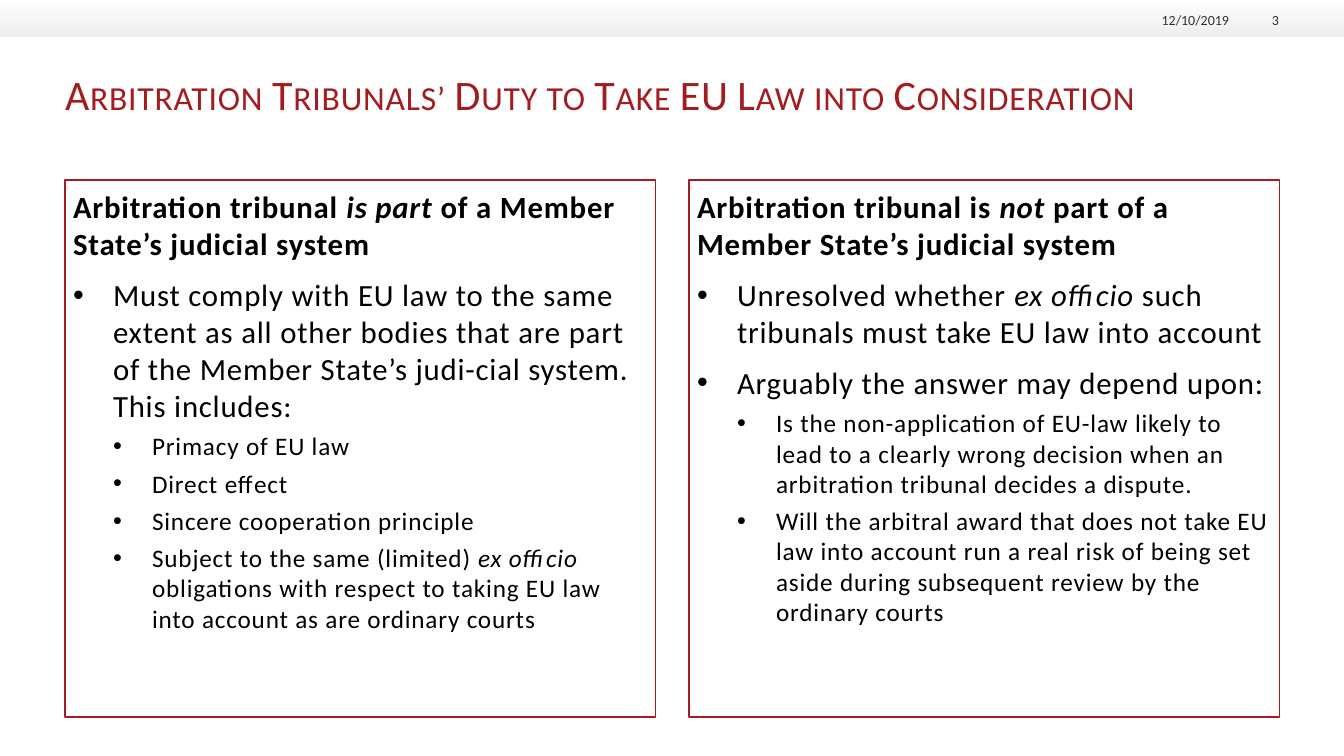
from lxml import etree
from pptx import Presentation
from pptx.dml.color import RGBColor
from pptx.enum.shapes import MSO_SHAPE
from pptx.enum.text import MSO_ANCHOR, MSO_AUTO_SIZE, PP_ALIGN
from pptx.oxml.ns import qn
from pptx.util import Pt

RECTANGLE = MSO_SHAPE.RECTANGLE
TOP, BOTTOM = MSO_ANCHOR.TOP, MSO_ANCHOR.BOTTOM
LEFT, RIGHT = PP_ALIGN.LEFT, PP_ALIGN.RIGHT
NO_FIT = MSO_AUTO_SIZE.NONE

PX = 914400 / 100.8
TWO_CONTENT = 3

THEME = {
    "font": "Calibri",
    "accent": RGBColor(0xA3, 0x1D, 0x20),
    "text": RGBColor(0, 0, 0),
    "muted": RGBColor(0x33, 0x33, 0x33),
    "bar": (RGBColor(0xFF, 0xFF, 0xFF), RGBColor(0xEE, 0xEF, 0xEE)),
    "title_size": Pt(30),
    "level_sizes": (Pt(22), Pt(18)),
    "meta_size": Pt(10),
    "spacing": "60",
}

HEADING, POINT, SUBPOINT = "heading", "point", "subpoint"
STYLES = {
    HEADING: {"level": 0, "margin": 0, "hang": 0, "before": Pt(0)},
    POINT: {"level": 0, "margin": 40, "hang": 40, "before": Pt(10)},
    SUBPOINT: {"level": 1, "margin": 79, "hang": 39, "before": Pt(5)},
}

COLUMNS = [
    [
        (HEADING, ["Arbitration tribunal ", "is part ", "of a Member State’s judicial system"]),
        (POINT, ["Must comply with EU law to the same extent as all other bodies that are "
                 "part of the Member State’s judi-cial system. This includes:"]),
        (SUBPOINT, ["Primacy of EU law"]),
        (SUBPOINT, ["Direct effect"]),
        (SUBPOINT, ["Sincere cooperation principle"]),
        (SUBPOINT, ["Subject to the same (limited) ", "ex officio",
                    " obligations with respect to taking EU law into account as are ordinary courts"]),
    ],
    [
        (HEADING, ["Arbitration tribunal is ", "not", " part of a Member State’s judicial system"]),
        (POINT, ["Unresolved whether ", "ex officio", " such tribunals must take EU law into account"]),
        (POINT, ["Arguably the answer may depend upon:"]),
        (SUBPOINT, ["Is the non-application of EU-law likely to lead to a clearly wrong decision "
                    "when an arbitration tribunal decides a dispute."]),
        (SUBPOINT, ["Will the arbitral award that does not take EU law into account run a real "
                    "risk of being set aside during subsequent review by the ordinary courts"]),
    ],
]


def px(length):
    return round(length * PX)


def set_up(area, box, margin, anchor):
    frame = area.text_frame
    formats = dict(zip(("left", "top", "width", "height"), map(px, box)))
    for name, value in formats.items():
        setattr(area, name, value)
    formats = {"word_wrap": True, "auto_size": NO_FIT, "vertical_anchor": anchor}
    for side in ("left", "top", "right", "bottom"):
        formats["margin_" + side] = px(margin)
    for name, value in formats.items():
        setattr(frame, name, value)
    return frame


deck = Presentation()
deck.slide_width, deck.slide_height = px(1344), px(756)
slide = deck.slides.add_slide(deck.slide_layouts[TWO_CONTENT])
title, *panels = slide.placeholders

top_bar = slide.shapes.add_shape(RECTANGLE, 0, 0, px(1344), px(37))
top_bar.shadow.inherit = False
top_bar.line.fill.background()
top_bar.fill.gradient()
top_bar.fill.gradient_angle = 270
for stop, position, color in zip(top_bar.fill.gradient_stops, (0, 1), THEME["bar"]):
    stop.position = position
    stop.color.rgb = color
end_color = list(top_bar._element.iter(qn("a:srgbClr")))[-1]
etree.SubElement(end_color, qn("a:alpha"), val="93000")

heading = set_up(title, (65, 69, 1214, 96), 0, TOP).paragraphs[0]
heading.alignment = LEFT
heading_run = heading.add_run()
heading_run.text = "Arbitration Tribunals’ Duty to Take EU Law into Consideration"
formats = {"name": THEME["font"], "size": THEME["title_size"]}
for name, value in formats.items():
    setattr(heading_run.font, name, value)
heading_run.font.color.rgb = THEME["accent"]
for name, value in {"cap": "small", "spc": THEME["spacing"]}.items():
    heading_run._r.get_or_add_rPr().set(name, value)

for column, (panel, entries) in enumerate(zip(panels, COLUMNS)):
    frame = set_up(panel, (65 + column * 624, 180, 591, 537), 8, TOP)
    panel.line.color.rgb = THEME["accent"]
    panel.line.width = Pt(0.75)
    for index, (kind, pieces) in enumerate(entries):
        style = STYLES[kind]
        entry = frame.add_paragraph() if index else frame.paragraphs[0]
        properties = entry._p.get_or_add_pPr()
        properties.set("marL", str(px(style["margin"])))
        properties.set("indent", str(-px(style["hang"])))
        if kind == HEADING:
            etree.SubElement(properties, qn("a:buNone"))
        else:
            etree.SubElement(properties, qn("a:buFont"), typeface="Arial")
            etree.SubElement(properties, qn("a:buChar"), char="•")
        entry.level = style["level"]
        entry.space_before = style["before"]
        entry.alignment = LEFT
        for position, piece in enumerate(pieces):
            run = entry.add_run()
            run.text = piece
            formats = {
                "name": THEME["font"],
                "size": THEME["level_sizes"][style["level"]],
                "bold": kind == HEADING,
                "italic": position == 1,
            }
            for name, value in formats.items():
                setattr(run.font, name, value)
            run.font.color.rgb = THEME["text"]
            run._r.get_or_add_rPr().set("spc", THEME["spacing"])

for label, left, width in (("12/10/2019", 1139, 90), ("3", 1237, 42)):
    meta = slide.shapes.add_textbox(0, 0, 0, 0)
    line = set_up(meta, (left, 9, width, 19), 0, BOTTOM).paragraphs[0]
    line.alignment = RIGHT
    run = line.add_run()
    run.text = label
    for name, value in {"name": THEME["font"], "size": THEME["meta_size"]}.items():
        setattr(run.font, name, value)
    run.font.color.rgb = THEME["muted"]

deck.save("out.pptx")
